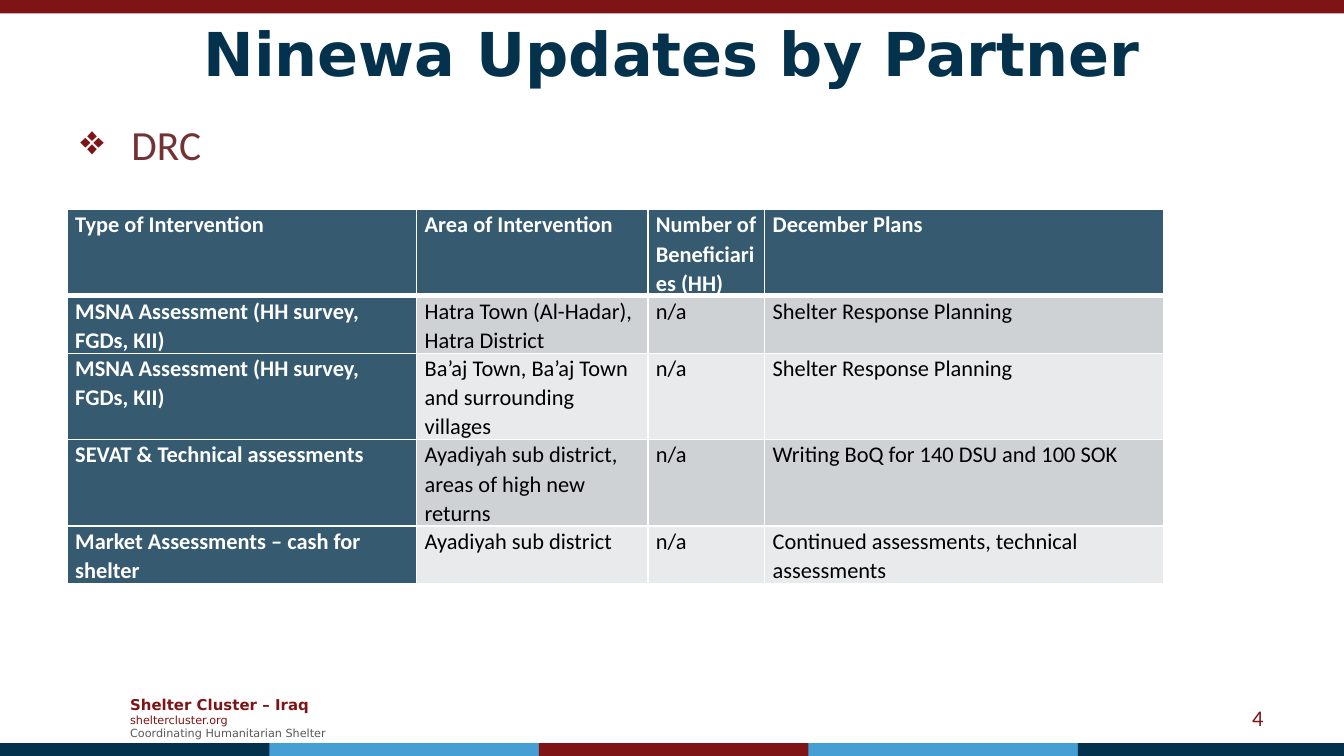
"""Build the Ninewa partner update slide."""
from typing import NamedTuple

from lxml import etree
from pptx import Presentation
from pptx import util as u
from pptx.dml.color import RGBColor
from pptx.enum import shapes, text
from pptx.oxml import ns

WIDTH, HEIGHT = u.Inches(10), u.Inches(10 * 9 / 16)
COLOURS = {
    "navy": "04314C", "blue": "459FD5", "red": "7F1416", "brown": "733234",
    "grey": "595959", "slate": "365A70", "band": "CED2D5", "pale": "E8EAEB",
    "white": "FFFFFF", "black": "000000",
}
HEADINGS = ("Type of Intervention", "Area of Intervention",
            "Number of Beneficiaries (HH)", "December Plans")
COLUMN_SHARES = (26, 17.2, 8.7, 29.7)
ROW_SHARES = (11.4, 7.5, 11.4, 11.4, 7.5)
BAR_STEP, BAR_WIDTH = 20.05, 20.1


class Area(NamedTuple):
    """Place and size in percent of the slide."""
    left: float
    top: float
    width: float
    height: float

    def lengths(self) -> tuple:
        """Return left, top, width and height in EMU."""
        return (across(self.left), down(self.top),
                across(self.width), down(self.height))


class Intervention(NamedTuple):
    """One row of the partner's table."""
    kind: str
    place: str
    households: str
    plans: str


class Line(NamedTuple):
    """One line of the footer."""
    words: str
    size: float
    colour: str
    bold: bool = False


INTERVENTIONS = (
    Intervention("MSNA Assessment (HH survey, FGDs, KII)",
                 "Hatra Town (Al-Hadar), Hatra District",
                 "n/a", "Shelter Response Planning"),
    Intervention("MSNA Assessment (HH survey, FGDs, KII)",
                 "Ba’aj Town, Ba’aj Town and surrounding villages",
                 "n/a", "Shelter Response Planning"),
    Intervention("SEVAT & Technical assessments",
                 "Ayadiyah sub district, areas of high new returns",
                 "n/a", "Writing BoQ for 140 DSU and 100 SOK"),
    Intervention("Market Assessments – cash for shelter",
                 "Ayadiyah sub district",
                 "n/a", "Continued assessments, technical assessments"),
)
FOOTER = (
    Line("Shelter Cluster – Iraq", 8, "red", True),
    Line("sheltercluster.org", 6, "red"),
    Line("Coordinating Humanitarian Shelter", 6, "grey"),
)


def across(percent: float) -> int:
    """Turn a share of the slide width into EMU."""
    return round(WIDTH * percent / 100)


def down(percent: float) -> int:
    """Turn a share of the slide height into EMU."""
    return round(HEIGHT * percent / 100)


def rgb(name: str) -> RGBColor:
    """Look up a named colour."""
    return RGBColor.from_string(COLOURS[name])


def write(paragraph, words: str, *, size: float, colour: str, bold: bool = False,
          face: str = "Calibri", align=text.PP_ALIGN.LEFT, spacing=None) -> None:
    """Put formatted words into a paragraph."""
    paragraph.alignment = align
    if spacing:
        paragraph.line_spacing = spacing
    run = paragraph.add_run()
    run.text = words
    font = run.font
    font.name, font.size, font.bold = face, u.Pt(size), bold
    font.color.rgb = rgb(colour)


def add_frame(slide, area: Area, anchor=text.MSO_ANCHOR.MIDDLE):
    """Add a wrapping text box and return its frame."""
    frame = slide.shapes.add_textbox(*area.lengths()).text_frame
    frame.word_wrap = True
    frame.vertical_anchor = anchor
    return frame


def add_bar(slide, area: Area, colour: str) -> None:
    """Add a plain coloured bar."""
    bar = slide.shapes.add_shape(shapes.MSO_SHAPE.RECTANGLE, *area.lengths())
    bar.shadow.inherit = False
    bar.fill.solid()
    bar.fill.fore_color.rgb = rgb(colour)
    bar.line.fill.background()


def add_bullet(paragraph, mark: str, colour: str, indent: float) -> None:
    """Give a paragraph a hanging coloured bullet."""
    props = paragraph._p.get_or_add_pPr()
    props.set("marL", str(u.Inches(indent)))
    props.set("indent", str(-u.Inches(indent)))
    tint = etree.SubElement(props, ns.qn("a:buClr"))
    etree.SubElement(tint, ns.qn("a:srgbClr"), val=COLOURS[colour])
    etree.SubElement(props, ns.qn("a:buChar"), char=mark)


def add_borders(cell, top: float, bottom: float) -> None:
    """Draw white borders round a cell."""
    props = cell._tc.get_or_add_tcPr()
    for side, points in (("L", 1), ("R", 1), ("T", top), ("B", bottom)):
        edge = etree.SubElement(props, ns.qn(f"a:ln{side}"), w=str(u.Pt(points)))
        fill = etree.SubElement(edge, ns.qn("a:solidFill"))
        etree.SubElement(fill, ns.qn("a:srgbClr"), val=COLOURS["white"])


def fill_cell(cell, words: str, row: int, column: int) -> None:
    """Style a table cell by its place and write its words."""
    heading = row == 0 or column == 0
    add_borders(cell, top=3 if row == 1 else 1, bottom=3 if row == 0 else 1)
    cell.fill.solid()
    cell.fill.fore_color.rgb = rgb(
        "slate" if heading else "band" if row % 2 else "pale")
    cell.margin_left = cell.margin_right = u.Inches(0.06)
    cell.margin_top = cell.margin_bottom = 0
    write(cell.text_frame.paragraphs[0], words, size=12, bold=heading,
          colour="white" if heading else "black", spacing=1.07)


def add_interventions(slide, area: Area) -> None:
    """Add the table of interventions."""
    rows = (HEADINGS, *INTERVENTIONS)
    table = slide.shapes.add_table(
        len(rows), len(HEADINGS), *area.lengths()).table
    for column, share in zip(table.columns, COLUMN_SHARES):
        column.width = across(share)
    for row, share in zip(table.rows, ROW_SHARES):
        row.height = down(share)
    for r, row in enumerate(rows):
        for c, words in enumerate(row):
            fill_cell(table.cell(r, c), words, r, c)


def main() -> None:
    """Compose and save the slide."""
    deck = Presentation()
    deck.slide_width, deck.slide_height = WIDTH, HEIGHT
    slide = deck.slides.add_slide(deck.slide_layouts[6])

    footer = add_frame(slide, Area(8.7, 91.02, 17.3, 7.82))
    for i, line in enumerate(FOOTER):
        paragraph = footer.add_paragraph() if i else footer.paragraphs[0]
        write(paragraph, line.words, size=line.size, colour=line.colour,
              bold=line.bold, face="DejaVu Sans")

    add_bar(slide, Area(0, 0, 100, 1.78), "red")
    for i, colour in enumerate(("navy", "blue", "red", "blue", "navy")):
        add_bar(slide, Area(i * BAR_STEP, 98.31, BAR_WIDTH, 1.78), colour)

    title = add_frame(slide, Area(5, 4.09, 90, 5.69))
    write(title.paragraphs[0], "Ninewa Updates by Partner", size=32.4,
          colour="navy", bold=True, face="DejaVu Sans",
          align=text.PP_ALIGN.CENTER)

    partner = add_frame(slide, Area(5, 14.93, 87.8, 7.47), text.MSO_ANCHOR.TOP)
    add_bullet(partner.paragraphs[0], "❖", "red", 0.38)
    write(partner.paragraphs[0], "DRC", size=22.2, colour="brown")

    page_number = add_frame(slide, Area(71.7, 92.27, 23.3, 5.33))
    write(page_number.paragraphs[0], "4", size=12, colour="red",
          align=text.PP_ALIGN.RIGHT)

    add_interventions(slide, Area(5, 27.73, sum(COLUMN_SHARES), sum(ROW_SHARES)))
    deck.save("out.pptx")


if __name__ == "__main__":
    main()
